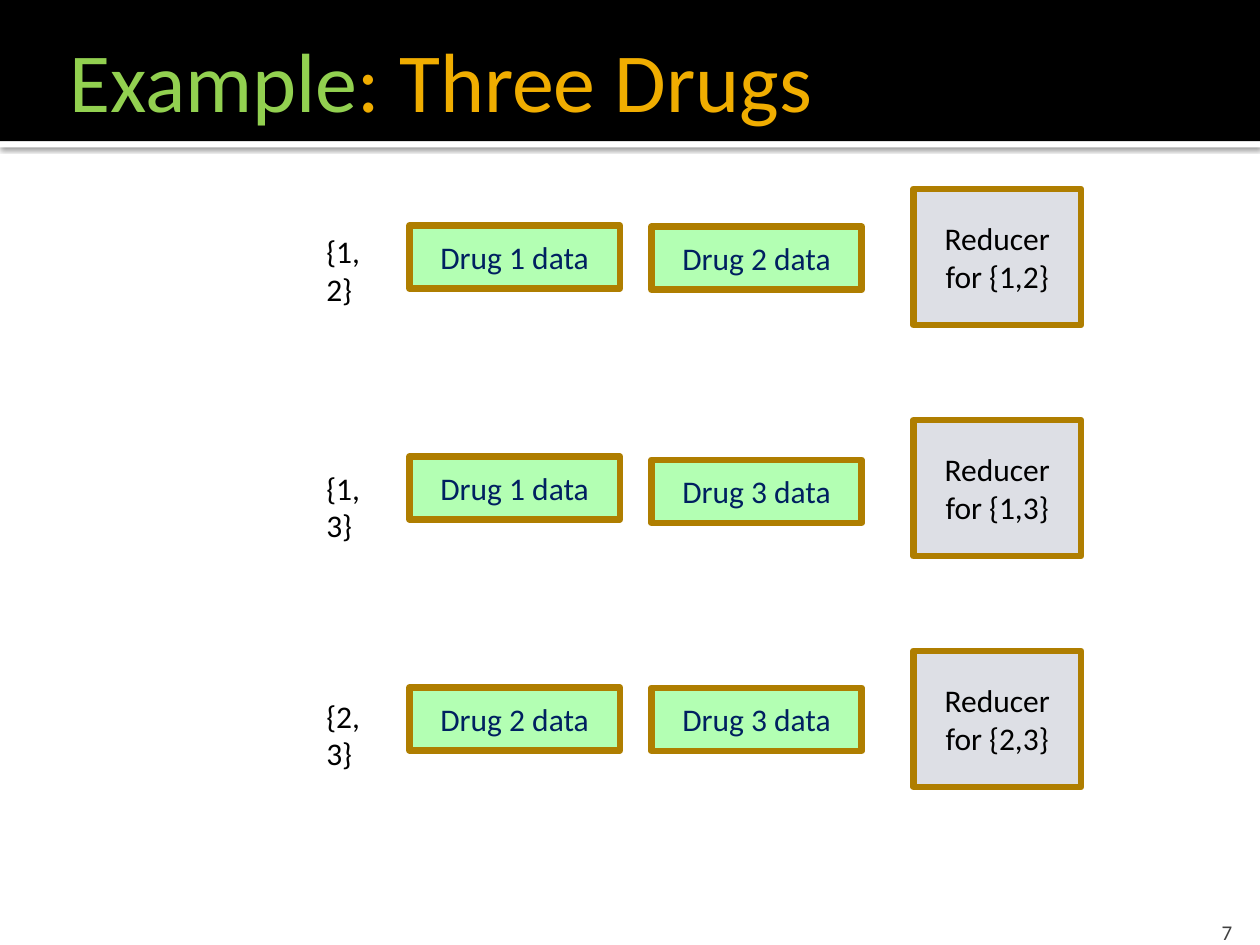
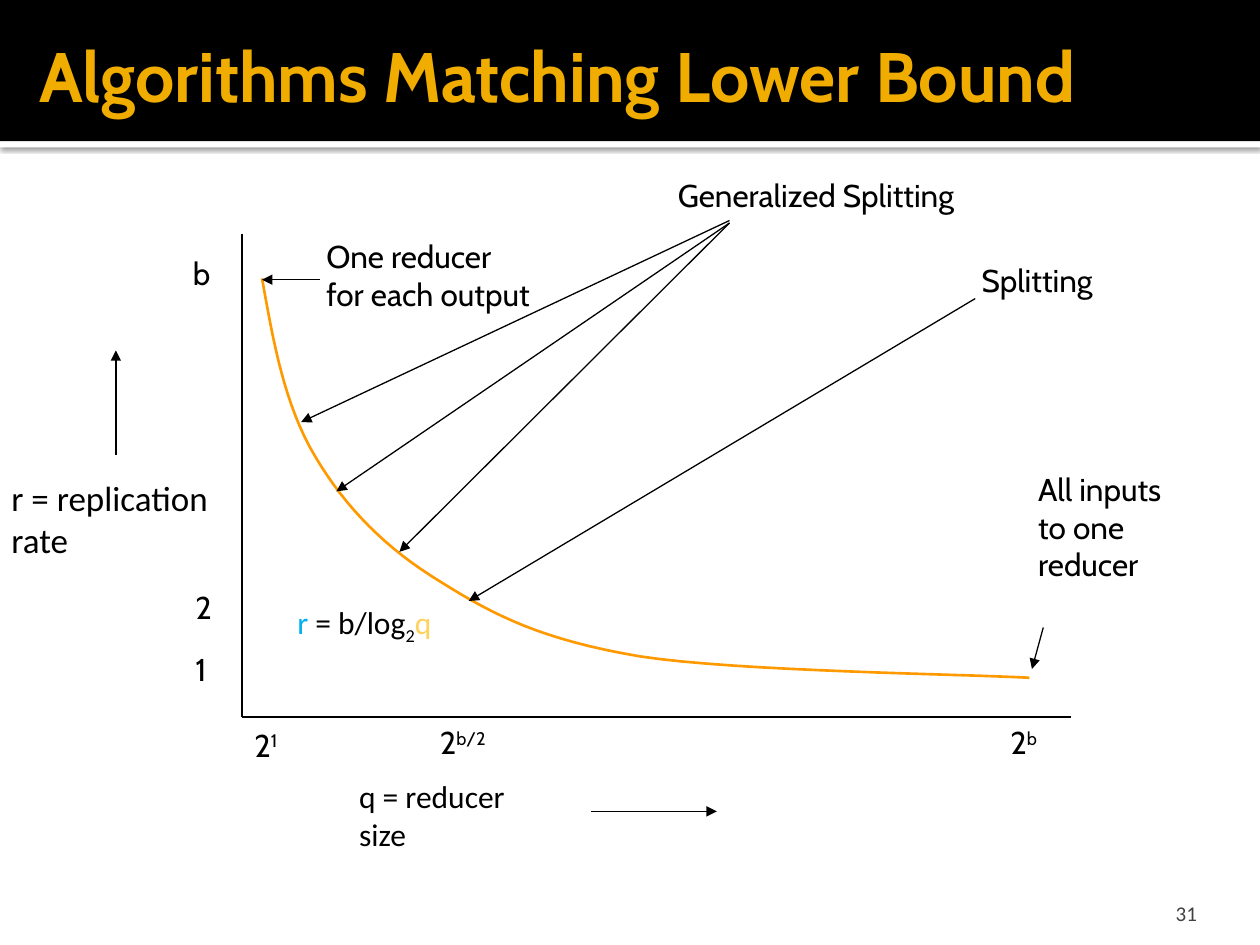
from lxml.etree import SubElement
from pptx import Presentation
from pptx.dml.color import RGBColor
from pptx.enum.shapes import MSO_CONNECTOR, MSO_SHAPE
from pptx.enum.text import MSO_ANCHOR as ANCHOR, MSO_AUTO_SIZE, PP_ALIGN as ALIGN
from pptx.oxml.ns import qn
from pptx.util import Inches, Pt

WHITE = RGBColor(0xFF, 0xFF, 0xFF)
BLACK = RGBColor(0x00, 0x00, 0x00)
GOLD = RGBColor(0xF0, 0xAD, 0x00)
DARK_GOLD = RGBColor(0xAF, 0x7E, 0x00)
LIGHT_GOLD = RGBColor(0xFF, 0xD2, 0x5D)
GREEN = RGBColor(0x92, 0xD0, 0x50)
PALE_GREEN = RGBColor(0xB3, 0xFF, 0xB3)
PALE_GRAY = RGBColor(0xDD, 0xDF, 0xE5)
DARK_GRAY = RGBColor(0x41, 0x41, 0x41)
NAVY = RGBColor(0x00, 0x20, 0x60)
SKY_BLUE = RGBColor(0x00, 0xB0, 0xF0)
ORANGE = RGBColor(0xFF, 0x99, 0x00)


def write_text(shape, paragraphs, font="Calibri", size=18, color=BLACK, bold=False,
               align=ALIGN.LEFT, anchor=ANCHOR.TOP, inset=0.05):
    """Fill a shape; a paragraph is a string or a list of (text, color, baseline) runs."""
    frame = shape.text_frame
    frame_format = {"word_wrap": True, "auto_size": MSO_AUTO_SIZE.NONE, "vertical_anchor": anchor}
    for side in ("left", "right", "top", "bottom"):
        frame_format[f"margin_{side}"] = Inches(inset)
    for name, value in frame_format.items():
        setattr(frame, name, value)
    for index, runs in enumerate(paragraphs):
        paragraph = frame.add_paragraph() if index else frame.paragraphs[0]
        paragraph.alignment = align
        if isinstance(runs, str):
            runs = [(runs, color, 0)]
        for text, run_color, baseline in runs:
            run = paragraph.add_run()
            run.text = text
            for name, value in {"name": font, "size": Pt(size), "bold": bold}.items():
                setattr(run.font, name, value)
            run.font.color.rgb = run_color
            if baseline:
                run.font._element.set("baseline", str(baseline * 1000))


def add_box(slide, place, fill, outline=None):
    box = slide.shapes.add_shape(MSO_SHAPE.RECTANGLE, *map(Inches, place))
    box.shadow.inherit = False
    box.fill.solid()
    box.fill.fore_color.rgb = fill
    if outline is None:
        box.line.fill.background()
    else:
        box.line.color.rgb = outline
        box.line.width = Pt(3.78)
    return box


presentation = Presentation()
presentation.slide_width, presentation.slide_height = Inches(10), Inches(7.5)
title_only = presentation.slide_layouts[5]
drugs_slide = presentation.slides.add_slide(title_only)
bound_slide = presentation.slides.add_slide(title_only)

# Header bands, moved to the slide master behind its placeholders
white_band = add_box(drugs_slide, (0, 1.12, 10, 0.05), WHITE)
effects = white_band.element.spPr.find(qn("a:effectLst"))
shadow = SubElement(effects, qn("a:outerShdw"), blurRad=str(Pt(3)), dist=str(Pt(0.8)),
                    dir="5400000", algn="t", rotWithShape="0")
shadow_color = SubElement(shadow, qn("a:srgbClr"), val="000000")
SubElement(shadow_color, qn("a:alpha"), val="60000")
black_band = add_box(drugs_slide, (0, 0, 10, 1.12), BLACK)
master_tree = presentation.slide_master.element.cSld.spTree
for position, band in enumerate((white_band, black_band), start=2):
    master_tree.insert(position, band.element)

# Titles and slide numbers
headers = [
    (drugs_slide, (0.5, 0.17, 9.5, 0.92), [("Example", GREEN, 0), (": Three Drugs", GOLD, 0)],
     {"size": 48, "anchor": ANCHOR.MIDDLE}, "7", (9.64, 7.31, 0.14, 0.19)),
    (bound_slide, (0.26, 0.21, 9.32, 0.75), "Algorithms Matching Lower Bound",
     {"size": 40, "font": "Cabin", "bold": True, "color": GOLD}, "31", (9.31, 7.16, 0.19, 0.19)),
]
for slide, title_place, title_text, title_format, number, number_place in headers:
    title = slide.shapes.title
    for name, value in zip(("left", "top", "width", "height"), title_place):
        setattr(title, name, Inches(value))
    write_text(title, [title_text], **title_format)
    number_box = slide.shapes.add_textbox(*map(Inches, number_place))
    write_text(number_box, [number], size=12, color=DARK_GRAY, align=ALIGN.RIGHT,
               anchor=ANCHOR.BOTTOM, inset=0)

# Three drugs: one row for each pair
CENTERED = {"align": ALIGN.CENTER, "anchor": ANCHOR.MIDDLE}
ROW_PITCH = 5.5 / 3
pairs = [((1, 2), 1.79, 1.8), ((1, 3), 3.67, 3.65), ((2, 3), 5.48, 5.46)]
for row, ((first, second), key_top, second_top) in enumerate(pairs):
    offset = row * ROW_PITCH
    key = drugs_slide.shapes.add_textbox(*map(Inches, (2.54, key_top, 0.6, 0.38)))
    write_text(key, [f"{{{first}, {second}}}"])
    for drug, left, top in ((first, 3.25, 1.79 + offset), (second, 5.17, second_top)):
        data_box = add_box(drugs_slide, (left, top, 1.67, 0.5), PALE_GREEN, DARK_GOLD)
        write_text(data_box, [f"Drug {drug} data"], color=NAVY, **CENTERED)
    reducer = add_box(drugs_slide, (7.25, 1.5 + offset, 1.33, 1.08), PALE_GRAY, DARK_GOLD)
    write_text(reducer, ["Reducer", f"for {{{first},{second}}}"], **CENTERED)

# Lower bound: curve sampled from cubic Bézier segments
STEPS = 16
curve_start = (2.08, 2.21)
curve_segments = [
    ((2.17, 2.72), (2.26, 3.22), (2.5, 3.62)),
    ((2.74, 4.03), (3.07, 4.36), (3.5, 4.62)),
    ((3.93, 4.89), (4.31, 5.08), (5.08, 5.21)),
    ((5.86, 5.33), (7.65, 5.35), (8.17, 5.38)),
]
curve_points = [curve_start]
for control_1, control_2, end in curve_segments:
    start = curve_points[-1]
    for step in range(1, STEPS + 1):
        t = step / STEPS
        weights = ((1 - t) ** 3, 3 * t * (1 - t) ** 2, 3 * t ** 2 * (1 - t), t ** 3)
        corners = (start, control_1, control_2, end)
        curve_points.append(tuple(sum(w * corner[axis] for w, corner in zip(weights, corners))
                                  for axis in (0, 1)))
builder = bound_slide.shapes.build_freeform(*map(Inches, curve_start))
builder.add_line_segments([(Inches(x), Inches(y)) for x, y in curve_points[1:]], close=False)
curve = builder.convert_to_shape()
curve.shadow.inherit = False
curve.fill.background()
curve.line.color.rgb = ORANGE
curve.line.width = Pt(1.5)

# Axes and arrows
axes = [(1.92, 1.86, 1.92, 5.69), (1.92, 5.69, 8.5, 5.69)]
arrows = [
    (4.69, 6.44, 5.69, 6.44), (0.92, 3.61, 0.92, 2.78),
    (8.28, 4.98, 8.19, 5.31), (2.54, 2.22, 2.08, 2.22), (7.74, 2.37, 3.72, 4.77),
    (5.79, 1.75, 2.39, 3.35), (5.79, 1.77, 2.67, 3.9), (5.79, 1.77, 3.17, 4.38),
]
for ends in axes + arrows:
    line = bound_slide.shapes.add_connector(MSO_CONNECTOR.STRAIGHT, *map(Inches, ends))
    line.line.color.rgb = BLACK
    line.line.width = Pt(0.75)
    properties = line.element.spPr
    if ends in arrows:
        SubElement(properties.find(qn("a:ln")), qn("a:tailEnd"), type="triangle")
    SubElement(properties, qn("a:effectLst"))

# Chart labels
formula = [("r", SKY_BLUE, 0), (" = b/log", BLACK, 0), ("2", BLACK, -25), ("q", LIGHT_GOLD, 0)]
labels = [
    ((2.8, 6.12, 1.37, 0.95), ["q = reducer", "size"], "Calibri", 18),
    ((0.04, 3.73, 1.97, 0.74), ["r = replication", "rate"], "Calibri", 20),
    ((2.31, 4.74, 1.2, 0.43), [formula], "Calibri", 18),
    ((1.48, 1.97, 0.25, 0.39), ["b"], "Cabin", 18),
    ((1.5, 4.62, 0.24, 0.39), ["2"], "Cabin", 18),
    ((1.5, 5.11, 0.24, 0.39), ["1"], "Cabin", 18),
    ((8.19, 3.68, 1.24, 0.98), ["All inputs", "to one", "reducer"], "Cabin", 18),
    ((2.54, 1.83, 1.86, 0.68), ["One reducer", "for each output"], "Cabin", 18),
    ((7.74, 2.02, 1.05, 0.39), ["Splitting"], "Cabin", 18),
    ((5.33, 1.35, 2.47, 0.39), ["Generalized Splitting"], "Cabin", 18),
]
powers = [("1", 1.97, 5.71, 0.33), ("b/2", 3.44, 5.69, 0.51), ("b", 7.97, 5.69, 0.34)]
for exponent, left, top, width in powers:
    power = [("2", BLACK, 0), (exponent, BLACK, 30)]
    labels.append(((left, top, width, 0.39), [power], "Cabin", 18))
for place, paragraphs, font, size in labels:
    label = bound_slide.shapes.add_textbox(*map(Inches, place))
    write_text(label, paragraphs, font=font, size=size)

presentation.save("out.pptx")
